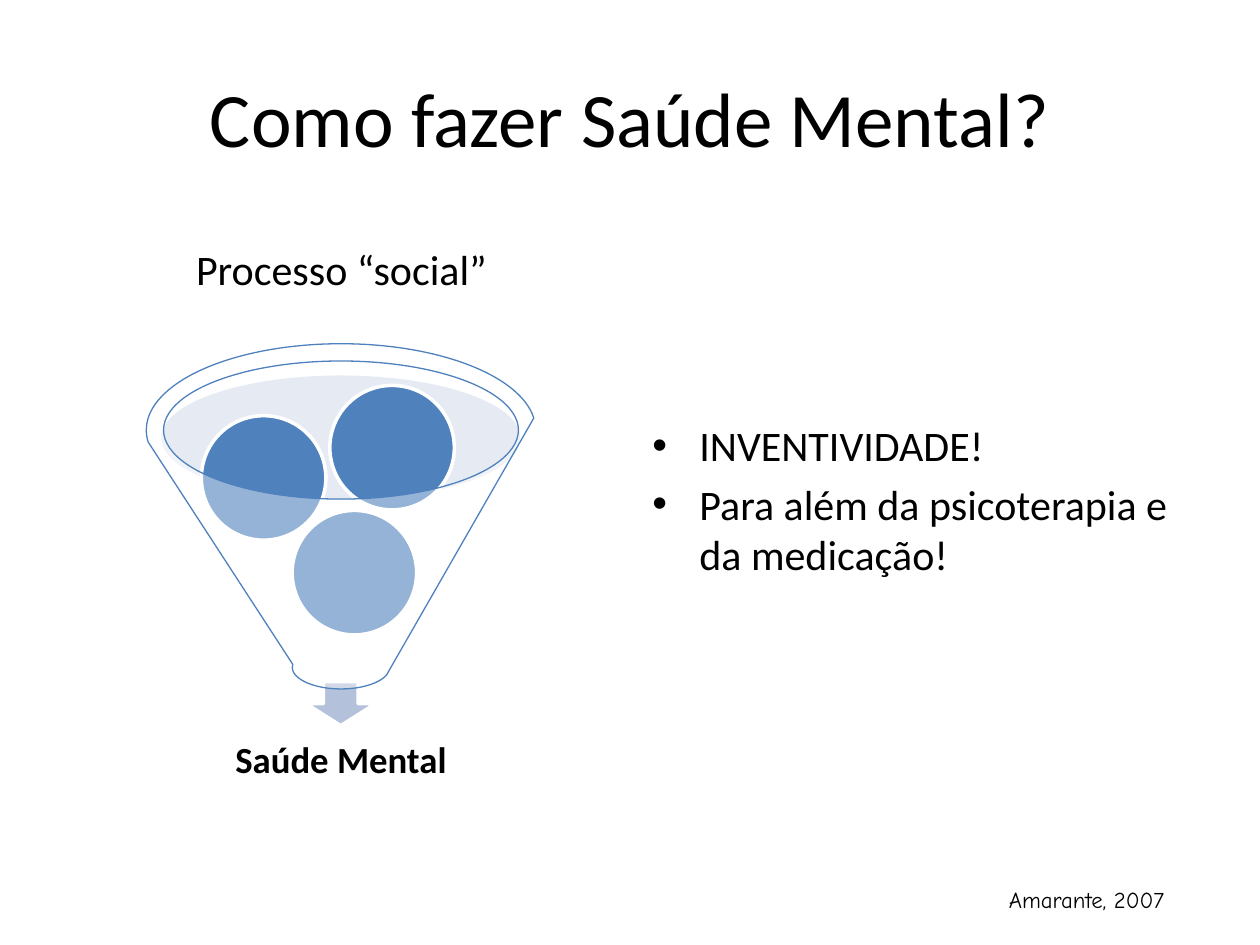
from lxml import etree
from pptx import Presentation
from pptx.dml.color import RGBColor
from pptx.enum.shapes import MSO_SHAPE
from pptx.enum.text import MSO_ANCHOR, PP_ALIGN
from pptx.oxml.ns import qn
from pptx.util import Cm, Pt

ELLIPSE = MSO_SHAPE.OVAL
ARROW = MSO_SHAPE.DOWN_ARROW
FUNNEL = MSO_SHAPE.FUNNEL
TOP, MIDDLE, BOTTOM = MSO_ANCHOR.TOP, MSO_ANCHOR.MIDDLE, MSO_ANCHOR.BOTTOM
LEFT, CENTER = PP_ALIGN.LEFT, PP_ALIGN.CENTER

BLACK, WHITE, BLUE = "000000", "FFFFFF", "4F81BD"
PALE, ARROW_BLUE = "C2CDE1", "B3C1DB"


def color(value):
    return RGBColor.from_string(value)


class SlidePainter:
    """Holds the text style and the current slide, and adds elements to it."""

    def __init__(self, page, font="Calibri", ink=BLACK):
        self.page = page
        self.font = font
        self.ink = ink

    def text(self, lines, left, top, width, height, size, align=LEFT, anchor=TOP,
             font=None, bold=False, bullet=False, before=0, inset=None):
        box = self.page.shapes.add_textbox(Cm(left), Cm(top), Cm(width), Cm(height))
        frame = box.text_frame
        frame.word_wrap = True
        frame.vertical_anchor = anchor
        if inset is not None:
            frame.margin_left = frame.margin_right = Cm(inset)
            frame.margin_top = frame.margin_bottom = Cm(inset)
        frame.text = "\n".join(lines)
        for para in frame.paragraphs:
            para.alignment = align
            para.space_before = Pt(before)
            para.font.name = font or self.font
            para.font.size = Pt(size)
            para.font.bold = bold
            para.font.color.rgb = color(self.ink)
            if bullet:
                self.bullet(para)

    def bullet(self, para, indent=0.95):
        properties = para._p.get_or_add_pPr()
        properties.set("marL", str(Cm(indent)))
        properties.set("indent", str(-Cm(indent)))
        face = etree.Element(qn("a:buFont"), typeface="Arial")
        mark = etree.Element(qn("a:buChar"), char="•")
        place = properties.index(properties.find(qn("a:defRPr")))
        properties[place:place] = [face, mark]

    def shape(self, kind, left, top, width, height, fill, opacity=100,
              line=None, weight=2):
        shape = self.page.shapes.add_shape(
            kind, Cm(left), Cm(top), Cm(width), Cm(height))
        shape.shadow.inherit = False
        shape.fill.solid()
        shape.fill.fore_color.rgb = color(fill)
        if opacity < 100:
            tone = shape.fill._xPr.find(qn("a:solidFill"))[0]
            etree.SubElement(tone, qn("a:alpha"), val=str(opacity * 1000))
        if line:
            shape.line.color.rgb = color(line)
            shape.line.width = Pt(weight)
        else:
            shape.line.fill.background()


def main():
    deck = Presentation()
    deck.slide_width, deck.slide_height = Cm(25.4), Cm(19.05)
    painter = SlidePainter(deck.slides.add_slide(deck.slide_layouts[6]))

    painter.text(["Como fazer Saúde Mental?"], 1.27, 0.76, 22.86, 3.18, 44,
                 align=CENTER, anchor=MIDDLE)
    painter.text(["Processo “social”"], 1.27, 4.27, 11.23, 1.78, 24,
                 align=CENTER, anchor=BOTTOM, before=4.8)
    painter.text(["INVENTIVIDADE!", "Para além da psicoterapia e da medicação!"],
                 12.9, 8.33, 11.23, 8.69, 24, bullet=True, before=4.8)

    painter.shape(ELLIPSE, 3.25, 7.57, 7.24, 2.51, PALE, opacity=40)
    painter.shape(ARROW, 6.17, 13.74, 1.4, 0.89, ARROW_BLUE, line=WHITE)
    painter.text(["Saúde Mental"], 3.51, 14.45, 6.73, 1.68, 21,
                 align=CENTER, anchor=MIDDLE, bold=True, inset=0.41)
    ball = 2.51
    for left, top in ((5.89, 10.29), (4.06, 8.38), (6.65, 7.77)):
        painter.shape(ELLIPSE, left, top, ball, ball, BLUE, line=WHITE)
    painter.shape(FUNNEL, 2.95, 6.93, 7.85, 6.96, WHITE, opacity=40,
                  line=BLUE, weight=0.75)

    painter.text(["Amarante, 2007"], 20.09, 17.73, 4.8, 0.81, 13, font="Comic Neue")
    deck.save("out.pptx")


if __name__ == "__main__":
    main()
